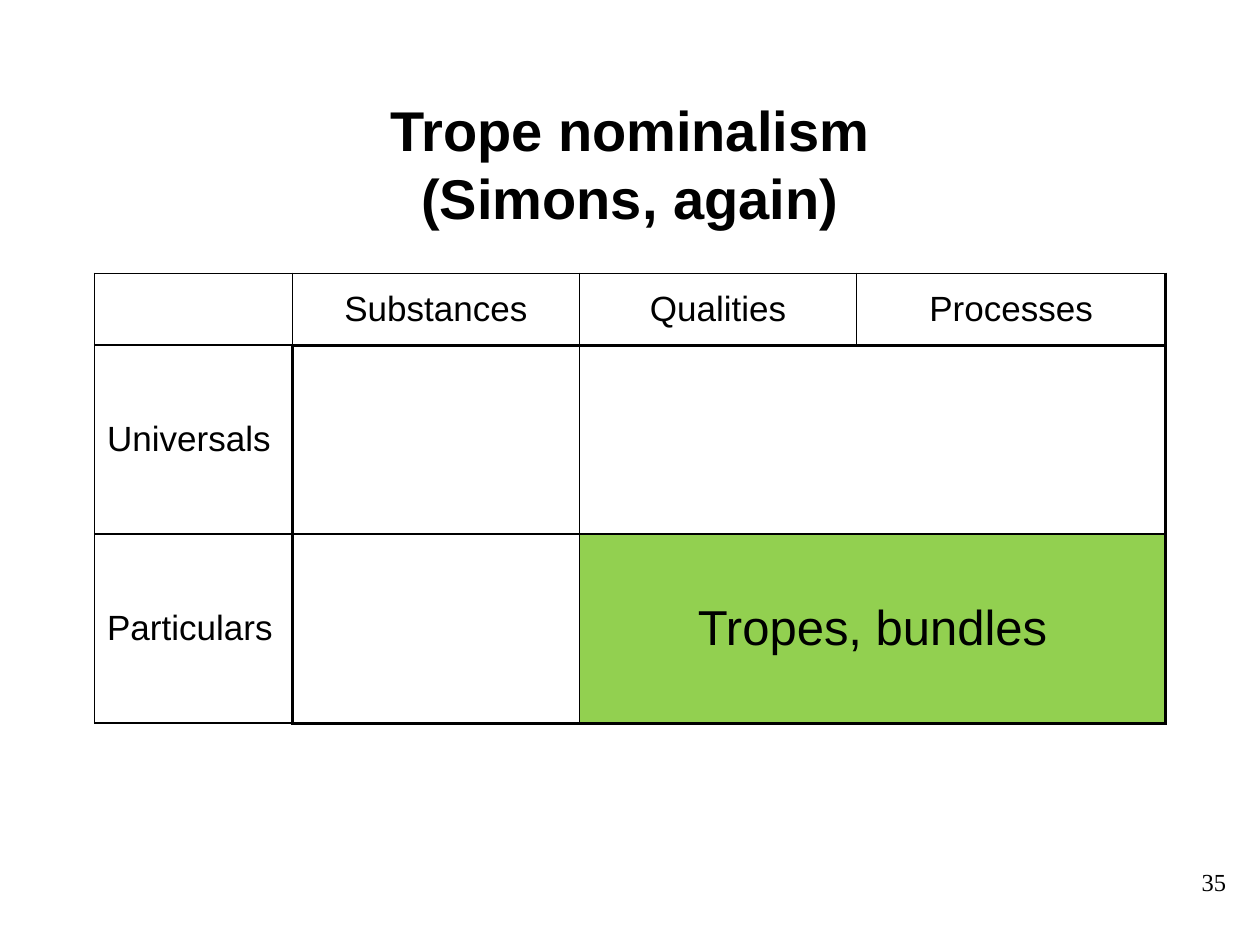
import pptx
import pptx.dml.color
import pptx.enum.text
import pptx.oxml
import pptx.oxml.ns
import pptx.util
from pptx.util import Inches

ALIGN = pptx.enum.text.PP_ALIGN
MIDDLE = pptx.enum.text.MSO_ANCHOR.MIDDLE
BLACK = "000000"
GREEN = "92D050"
THIN, HEAVY = 1, 2.25


def color(hex_value):
    return pptx.dml.color.RGBColor.from_string(hex_value)


class SlideBuilder:
    """Holds the text style and the slide being built."""

    font = "Arial"

    def __init__(self, slide):
        self.slide = slide

    def set_text(self, frame, text, size, align, bold=False, font=None):
        frame.text = text
        frame.word_wrap = True
        for paragraph in frame.paragraphs:
            paragraph.alignment = align
            for run in paragraph.runs:
                run.font.name = font or self.font
                run.font.size = pptx.util.Pt(size)
                run.font.bold = bold
                run.font.color.rgb = color(BLACK)

    def title(self, text, left, top, width, height):
        heading = self.slide.shapes.title
        heading.left, heading.top = Inches(left), Inches(top)
        heading.width, heading.height = Inches(width), Inches(height)
        self.set_text(heading.text_frame, text, 32, ALIGN.CENTER, bold=True)
        heading.text_frame.vertical_anchor = MIDDLE

    def label(self, text, left, top, width, height, size, align, font):
        box = self.slide.shapes.add_textbox(
            Inches(left), Inches(top), Inches(width), Inches(height))
        self.set_text(box.text_frame, text, size, align, font=font)

    def table(self, left, top, widths, heights):
        grid = self.slide.shapes.add_table(
            len(heights), len(widths), Inches(left), Inches(top),
            Inches(sum(widths)), Inches(sum(heights))).table
        grid.first_row = grid.horz_banding = False
        for column, width in zip(grid.columns, widths):
            column.width = Inches(width)
        for row, height in zip(grid.rows, heights):
            row.height = Inches(height)
        return grid

    def cell(self, cell, text, size, align, fill, borders):
        """Style one cell; borders maps L, R, T, B to points (0 is none)."""
        properties = cell._tc.get_or_add_tcPr()
        for side, weight in borders.items():
            paint = (f'<a:solidFill><a:srgbClr val="{BLACK}"/></a:solidFill>'
                     if weight else "<a:noFill/>")
            properties.append(pptx.oxml.parse_xml(
                f'<a:ln{side} {pptx.oxml.ns.nsdecls("a")} '
                f'w="{int(pptx.util.Pt(weight))}">{paint}</a:ln{side}>'))
        if fill:
            cell.fill.solid()
            cell.fill.fore_color.rgb = color(fill)
        else:
            cell.fill.background()
        cell.vertical_anchor = MIDDLE
        if text:
            self.set_text(cell.text_frame, text, size, align)
            cell.text_frame.paragraphs[0].space_before = pptx.util.Pt(size * 0.2)


def vertical_weight(row, edge):
    """Weight of a column edge: the body is framed, its right half is open."""
    if edge == 4 or (edge == 1 and row > 0):
        return HEAVY
    return 0 if edge == 3 and row > 0 else THIN


def horizontal_weight(edge, column):
    return HEAVY if edge in (1, 3) and column > 0 else THIN


def main():
    presentation = pptx.Presentation()
    presentation.slide_width, presentation.slide_height = Inches(10), Inches(7.5)
    slide = presentation.slides.add_slide(presentation.slide_layouts[5])
    builder = SlideBuilder(slide)

    # Page number and title
    builder.label("35", 7.75, 6.83, 2.08, 0.5, 14, ALIGN.RIGHT, "Times New Roman")
    builder.title("Trope nominalism\v(Simons, again)", 0.75, 0.67, 8.5, 1.25)

    # Ontology table
    categories = [
        ["", "Substances", "Qualities", "Processes"],
        ["Universals", "", "", ""],
        ["Particulars", "", "Tropes, bundles", ""],
    ]
    ontology = builder.table(0.75, 2.17, [1.57, 2.28, 2.2, 2.45], [0.57, 1.5, 1.5])
    ontology.cell(2, 2).merge(ontology.cell(2, 3))
    for r, texts in enumerate(categories):
        for c, text in enumerate(texts):
            in_tropes = r == 2 and c >= 2
            borders = {
                "L": vertical_weight(r, c),
                "R": HEAVY if in_tropes else vertical_weight(r, c + 1),
                "T": horizontal_weight(r, c),
                "B": horizontal_weight(r + 1, c),
            }
            builder.cell(ontology.cell(r, c), text, 28 if in_tropes else 20,
                         ALIGN.LEFT if c == 0 else ALIGN.CENTER,
                         GREEN if in_tropes else None, borders)

    presentation.save("out.pptx")


if __name__ == "__main__":
    main()
